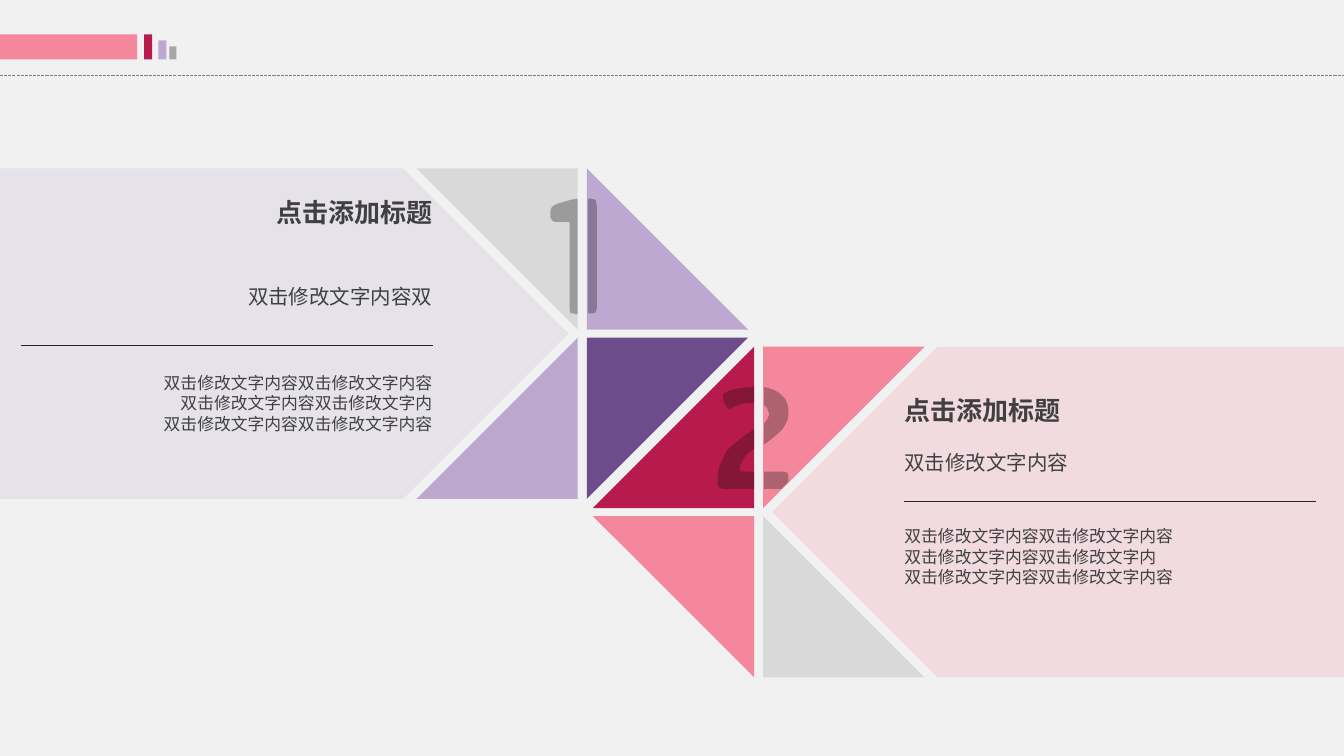
"""Build a two-part slide of triangles, numerals and captioned panels."""
from lxml import etree
from pptx import Presentation
from pptx.dml.color import RGBColor
from pptx.enum.dml import MSO_LINE
from pptx.enum.shapes import MSO_CONNECTOR, MSO_SHAPE
from pptx.enum.text import PP_ALIGN
from pptx.oxml.ns import qn
from pptx.util import Inches, Pt

RECT = MSO_SHAPE.RECTANGLE
STRAIGHT = MSO_CONNECTOR.STRAIGHT
DASH = MSO_LINE.SQUARE_DOT
LEFT, RIGHT = PP_ALIGN.LEFT, PP_ALIGN.RIGHT
TL, TR, BL, BR = (0, 0), (1, 0), (0, 1), (1, 1)

COLORS = {
    "back": "F1F1F1", "rule": "808080", "crimson": "B81A4D", "grey": "A6A6A6",
    "pink": "F4879C", "lilac": "BDA8D1", "purple": "6C4C8B", "silver": "D9D9D9",
    "text": "404040", "line": "262626", "digit": "0D0D0D",
}
SIDE, PITCH_X, PITCH_Y = 1.6, 1.69, 1.68

ONE = [
    [(5.73, 1.97), (5.67, 1.98), (5.53, 2.02), (5.49, 2.04), (5.47, 2.06),
     (5.46, 2.09), (5.46, 2.16), (5.48, 2.19), (5.5, 2.2), (5.64, 2.2),
     (5.65, 2.21), (5.65, 3.07), (5.66, 3.11), (5.69, 3.11), (5.73, 3.12)],
    [(5.83, 1.97), (5.86, 1.97), (5.9, 1.98), (5.91, 1.99), (5.92, 2.05),
     (5.92, 3.05), (5.91, 3.1), (5.88, 3.11), (5.83, 3.11)],
]
TWO = [
    [(7.58, 4.68), (7.78, 4.68), (7.81, 4.69), (7.82, 4.72), (7.82, 4.78),
     (7.75, 4.85), (7.58, 4.85)],
    [(7.58, 3.84), (7.58, 4.02), (7.61, 4.05), (7.62, 4.08), (7.63, 4.11),
     (7.62, 4.14), (7.61, 4.16), (7.58, 4.2), (7.58, 4.41), (7.62, 4.38),
     (7.67, 4.34), (7.72, 4.3), (7.76, 4.26), (7.79, 4.21), (7.81, 4.17),
     (7.82, 4.12), (7.82, 4.06), (7.81, 4.01), (7.79, 3.96), (7.76, 3.93),
     (7.73, 3.9), (7.68, 3.87), (7.62, 3.85)],
    [(7.48, 4.26), (7.4, 4.31), (7.31, 4.38), (7.21, 4.47), (7.18, 4.53),
     (7.15, 4.59), (7.13, 4.64), (7.12, 4.7), (7.12, 4.81), (7.14, 4.84),
     (7.17, 4.85), (7.48, 4.85), (7.48, 4.68), (7.36, 4.68), (7.34, 4.67),
     (7.34, 4.61), (7.36, 4.58), (7.39, 4.53), (7.43, 4.49), (7.48, 4.45)],
    [(7.48, 3.84), (7.41, 3.84), (7.36, 3.85), (7.28, 3.86), (7.22, 3.88),
     (7.17, 3.91), (7.17, 3.94), (7.18, 3.99), (7.21, 4.04), (7.23, 4.06),
     (7.27, 4.04), (7.32, 4.02), (7.38, 4), (7.48, 4)],
]


class Deck:
    def __init__(self, prs):
        self.slide = prs.slides.add_slide(prs.slide_layouts[6])
        self.shapes = self.slide.shapes
        self.fill(self.slide.background.fill, "back")

    def fill(self, fill, color):
        fill.solid()
        fill.fore_color.rgb = RGBColor.from_string(COLORS[color])

    def finish(self, s, color, alpha=100):
        s.shadow.inherit = False
        self.fill(s.fill, color)
        s.line.fill.background()
        if alpha < 100:
            clr = s._element.spPr.find(qn("a:solidFill"))[0]
            etree.SubElement(clr, qn("a:alpha"), val=str(alpha * 1000))

    def bar(self, x, y, w, h, color):
        self.finish(self.shapes.add_shape(RECT, Inches(x), Inches(y), Inches(w), Inches(h)), color)

    def line(self, x1, x2, y, color, dash=None):
        s = self.shapes.add_connector(STRAIGHT, Inches(x1), Inches(y), Inches(x2), Inches(y))
        s.line.color.rgb = RGBColor.from_string(COLORS[color])
        s.line.width = Pt(0.75)
        if dash is not None:
            s.line.dash_style = dash
        etree.SubElement(s._element.spPr, qn("a:effectLst"))

    def polygon(self, points, color, alpha=100):
        first, *rest = [(Inches(x), Inches(y)) for x, y in points]
        builder = self.shapes.build_freeform(*first)
        builder.add_line_segments(rest, close=True)
        self.finish(builder.convert_to_shape(), color, alpha)

    def triangles(self, left, top, tiles):
        for (col, row), (cx, cy), color in tiles:
            x, y = left + col * PITCH_X, top + row * PITCH_Y
            corners = [(1 - cx, cy), (cx, cy), (cx, 1 - cy)]
            self.polygon([(x + SIDE * a, y + SIDE * b) for a, b in corners], color)

    def text(self, x, y, w, h, lines, size, align, font="Noto Sans CJK SC", bold=False, spacing=None):
        tf = self.shapes.add_textbox(Inches(x), Inches(y), Inches(w), Inches(h)).text_frame
        tf.word_wrap = True
        tf.margin_left = tf.margin_right = tf.margin_top = tf.margin_bottom = 0
        tf.text = "\n".join(lines)
        for p in tf.paragraphs:
            p.alignment = align
            p.line_spacing = spacing
            for r in p.runs:
                r.font.name = font
                r.font.size = Pt(size)
                r.font.bold = bold
                r.font.color.rgb = RGBColor.from_string(COLORS["text"])
                etree.SubElement(r.font._element, qn("a:ea"), typeface="Noto Sans CJK SC")

    def caption(self, x, w, tops, subtitle, align):
        title_y, subtitle_y, rule_y, body_y = tops
        body = "双击修改文字内容双击修改文字内容"
        self.text(x, title_y, w, 0.28, ["点击添加标题"], 18.6, align, "Lato", True, 0.9)
        self.text(x, subtitle_y, w, 0.24, [subtitle], 14.6, align)
        self.text(x, body_y, w, 0.72, [body, body[:-1], body], 12, align)
        self.line(x, x + w, rule_y, "line")


def main():
    prs = Presentation()
    prs.slide_width, prs.slide_height = Inches(13.33), Inches(7.5)
    deck = Deck(prs)

    deck.line(0, 13.33, 0.75, "rule", DASH)
    for x, w, h, color in [(0, 1.36, 0.25, "pink"), (1.43, 0.08, 0.25, "crimson"),
                           (1.57, 0.08, 0.19, "lilac"), (1.68, 0.07, 0.13, "grey")]:
        deck.bar(x, 0.59 - h, w, h, color)

    for edge, shoulder, tip, top, color in [(13.33, 9.3, 7.66, 3.44, "pink"),
                                            (0, 4, 5.64, 1.67, "lilac")]:
        deck.polygon([(edge, top), (shoulder, top), (tip, top + 1.64),
                      (shoulder, top + 3.28), (edge, top + 3.28)], color, 20)

    deck.caption(0.21, 4.08, (1.98, 2.82, 3.43, 3.7), "双击修改文字内容双", RIGHT)
    deck.caption(8.97, 4.08, (3.95, 4.47, 4.98, 5.22), "双击修改文字内容", LEFT)

    deck.triangles(4.13, 1.67, [(TR, BL, "lilac"), (BR, TL, "purple"),
                                (BL, BR, "lilac"), (TL, TR, "silver")])
    deck.triangles(5.88, 3.44, [(TL, BR, "crimson"), (BL, TR, "pink"),
                                (BR, BL, "silver"), (TR, TL, "pink")])
    for piece in ONE + TWO:
        deck.polygon(piece, "digit", 30)

    prs.save("out.pptx")


if __name__ == "__main__":
    main()
